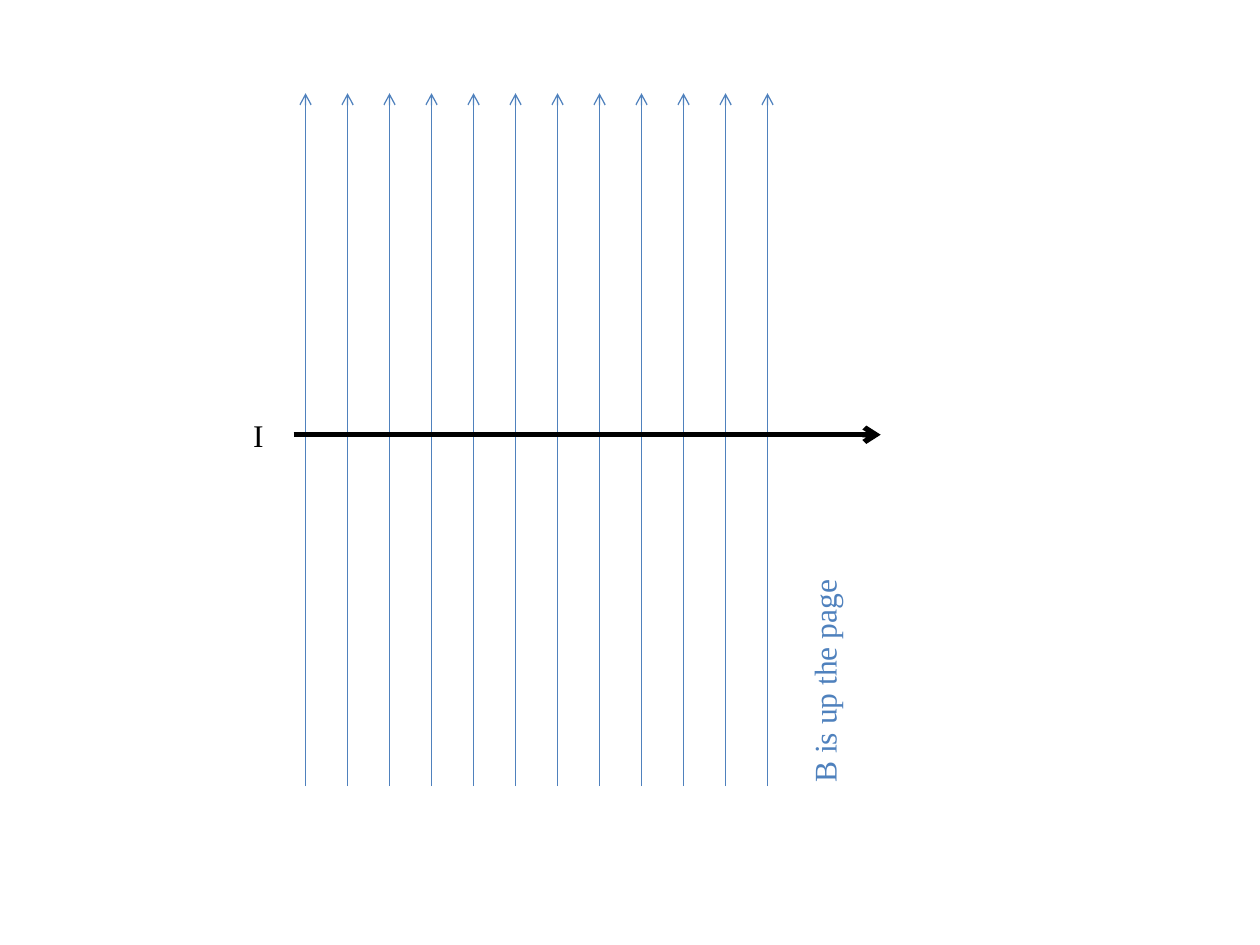
from dataclasses import dataclass

from lxml.etree import SubElement
from pptx import Presentation
from pptx.dml.color import RGBColor
from pptx.enum.shapes import MSO_CONNECTOR as Connector
from pptx.enum.text import MSO_AUTO_SIZE as AutoSize
from pptx.oxml.ns import qn
from pptx.shapes.shapetree import GroupShapes
from pptx.util import Inches, Pt

WIDTH, HEIGHT = 10, 7.5
FIELD_COLOUR, CURRENT_COLOUR = "4F81BD", "000000"
FIELD_LINES = 12
FIELD_LEFT, FIELD_TOP, FIELD_BOTTOM = 2.425, 0.74, 6.24
FIELD_STEP = WIDTH / 30
CURRENT_Y = 3.45


@dataclass(frozen=True)
class Arrow:
    """A straight arrow from its start to its tip, in inches."""

    start: tuple[float, float]
    tip: tuple[float, float]
    colour: str
    weight: float


@dataclass(frozen=True)
class Label:
    """A one-line text with its unrotated frame, in inches."""

    text: str
    frame: tuple[float, float, float, float]
    colour: str
    rotation: float = 0


def rgb(colour: str) -> RGBColor:
    """Turn a hex string into a colour."""
    return RGBColor.from_string(colour)


def draw_arrow(shapes: GroupShapes, arrow: Arrow) -> None:
    """Draw an arrow with an open head and no shadow."""
    ends = (Inches(value) for value in arrow.start + arrow.tip)
    connector = shapes.add_connector(Connector.STRAIGHT, *ends)
    connector.line.color.rgb = rgb(arrow.colour)
    connector.line.width = Pt(arrow.weight)
    SubElement(connector.line._get_or_add_ln(), qn("a:tailEnd"), type="arrow")
    SubElement(connector._element.spPr, qn("a:effectLst"))


def draw_label(shapes: GroupShapes, label: Label) -> None:
    """Write a label that does not wrap."""
    box = shapes.add_textbox(*(Inches(value) for value in label.frame))
    box.rotation = label.rotation
    box.text_frame.word_wrap = False
    box.text_frame.auto_size = AutoSize.SHAPE_TO_FIT_TEXT
    para = box.text_frame.paragraphs[0]
    para.text = label.text
    para.font.name = "Times New Roman"
    para.font.size = Pt(18)
    para.font.color.rgb = rgb(label.colour)


def main() -> None:
    """Build the slide of a current crossing a magnetic field."""
    deck = Presentation()
    deck.slide_width, deck.slide_height = Inches(WIDTH), Inches(HEIGHT)
    page = deck.slides.add_slide(deck.slide_layouts[6])

    field = page.shapes.add_group_shape().shapes
    for column in range(FIELD_LINES):
        x = FIELD_LEFT + column * FIELD_STEP
        draw_arrow(field, Arrow((x, FIELD_BOTTOM), (x, FIELD_TOP), FIELD_COLOUR, 0.75))
    draw_label(field, Label("B is up the page", (5.59, 5.16, 1.9, 0.4), FIELD_COLOUR, 270))

    current = page.shapes.add_group_shape().shapes
    draw_arrow(current, Arrow((2.33, CURRENT_Y), (6.99, CURRENT_Y), CURRENT_COLOUR, 3))
    draw_label(current, Label("I", (1.91, CURRENT_Y - 0.2, 0.29, 0.4), CURRENT_COLOUR))

    deck.save("out.pptx")


if __name__ == "__main__":
    main()
